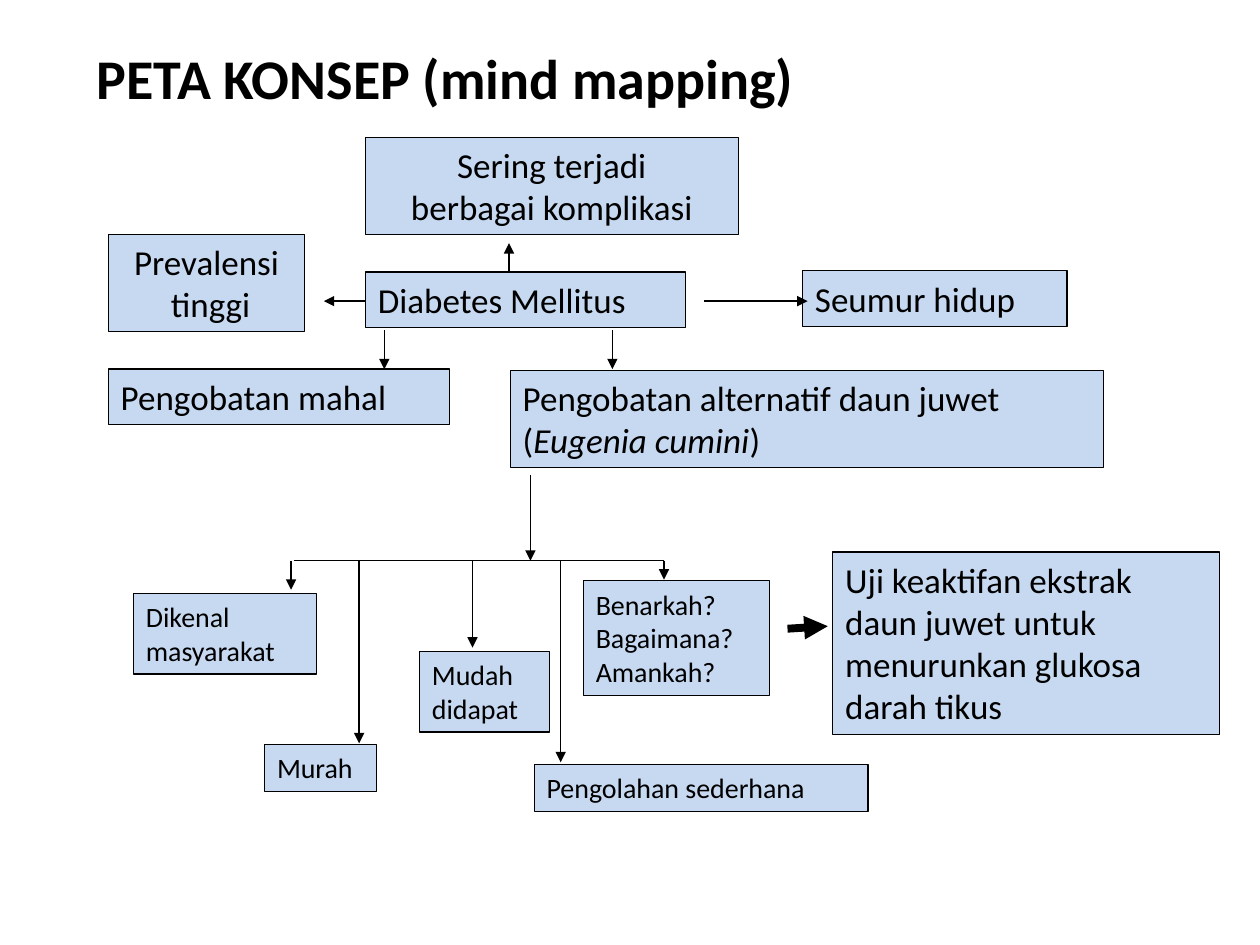
"""Build the concept map slide on diabetes mellitus and juwet leaf."""
from lxml import etree
from pptx import Presentation
from pptx.dml.color import RGBColor
from pptx.enum.shapes import MSO_CONNECTOR, MSO_SHAPE
from pptx.enum.text import MSO_ANCHOR, PP_ALIGN
from pptx.oxml.ns import qn
from pptx.util import Inches, Pt

STRAIGHT = MSO_CONNECTOR.STRAIGHT
RECTANGLE = MSO_SHAPE.RECTANGLE
TOP = MSO_ANCHOR.TOP
LEFT, CENTER = PP_ALIGN.LEFT, PP_ALIGN.CENTER
FONT = "Calibri"
COLORS = {"box": "C6D9F1", "ink": "000000"}
LARGE, SMALL = 20, 16
THIN, THICK = 0.75, 4.5
ITALIC = {"Eugenia cumini"}

TITLE = ("PETA KONSEP (mind mapping)", (0.67, 0.3, 8.24, 0.64), 32)

BOXES = [
    ((0.86, 1.86, 1.56, 0.77), LARGE, CENTER, [["Prevalensi"], [" tinggi"]]),
    ((0.86, 2.93, 2.71, 0.44), LARGE, LEFT, [["Pengobatan mahal"]]),
    ((2.9, 1.09, 2.96, 0.77), LARGE, CENTER, [["Sering terjadi"], ["berbagai komplikasi"]]),
    ((6.37, 2.15, 2.1, 0.44), LARGE, LEFT, [["Seumur hidup"]]),
    ((1.06, 4.71, 1.45, 0.64), SMALL, LEFT, [["Dikenal"], ["masyarakat"]]),
    ((2.1, 5.91, 0.89, 0.37), SMALL, LEFT, [["Murah"]]),
    ((3.33, 5.17, 1.03, 0.64), SMALL, LEFT, [["Mudah"], ["didapat"]]),
    ((4.63, 4.61, 1.48, 0.91), SMALL, LEFT, [["Benarkah?"], ["Bagaimana?"], ["Amankah?"]]),
    ((4.24, 6.07, 2.65, 0.37), SMALL, LEFT, [["Pengolahan sederhana"]]),
    ((2.9, 2.16, 2.54, 0.44), LARGE, LEFT, [["Diabetes Mellitus"]]),
    ((4.05, 2.94, 4.71, 0.77), LARGE, LEFT,
     [["Pengobatan alternatif daun juwet"], ["(", "Eugenia cumini", ")"]]),
    ((6.61, 4.38, 3.07, 1.45), LARGE, LEFT,
     [["Uji keaktifan ekstrak"], ["daun juwet untuk"], ["menurunkan glukosa"], ["darah tikus"]]),
]

BRANCH_Y = 4.45
BRANCH_LINE = (2.33, BRANCH_Y, 5.27, BRANCH_Y)
BRANCH_ENDS = [(5.27, 4.6), (4.45, 6.05), (3.75, 5.14), (2.31, 4.68), (2.85, 5.9)]
TOPIC_ARROWS = [
    (3.05, 2.62, 3.05, 2.93),
    (2.9, 2.39, 2.57, 2.39),
    (4.04, 2.16, 4.04, 1.93),
    (5.59, 2.39, 6.41, 2.39),
    (4.86, 2.62, 4.86, 2.93),
    (4.21, 3.77, 4.21, BRANCH_Y),
]
RESEARCH_ARROW = (6.25, 4.99, 6.57, 4.97)


def color(name):
    return RGBColor.from_string(COLORS[name])


def write_text(frame, lines, size, alignment=LEFT, bold=False):
    frame.word_wrap = True
    frame.vertical_anchor = TOP
    for index, line in enumerate(lines):
        paragraph = frame.add_paragraph() if index else frame.paragraphs[0]
        paragraph.alignment = alignment
        for text in line:
            run = paragraph.add_run()
            run.text = text
            run.font.name = FONT
            run.font.size = Pt(size)
            run.font.bold = bold
            run.font.italic = text in ITALIC
            run.font.color.rgb = color("ink")


def add_box(slide, place, size, alignment, lines):
    shape = slide.shapes.add_shape(RECTANGLE, *map(Inches, place))
    shape.shadow.inherit = False
    shape.fill.solid()
    shape.fill.fore_color.rgb = color("box")
    shape.line.color.rgb = color("ink")
    shape.line.width = Pt(THIN)
    write_text(shape.text_frame, lines, size, alignment)


def add_line(slide, ends, width=THIN, arrow=True):
    connector = slide.shapes.add_connector(STRAIGHT, *map(Inches, ends))
    connector.line.color.rgb = color("ink")
    connector.line.width = Pt(width)
    properties = connector._element.spPr
    if arrow:
        etree.SubElement(properties.find(qn("a:ln")), qn("a:tailEnd"), type="triangle")
    etree.SubElement(properties, qn("a:effectLst"))


def main():
    presentation = Presentation()
    presentation.slide_width, presentation.slide_height = Inches(10), Inches(7.5)
    slide = presentation.slides.add_slide(presentation.slide_layouts[6])

    add_line(slide, BRANCH_LINE, arrow=False)
    for x, end_y in BRANCH_ENDS:
        add_line(slide, (x, BRANCH_Y, x, end_y))
    for box in BOXES:
        add_box(slide, *box)
    for ends in TOPIC_ARROWS:
        add_line(slide, ends)
    add_line(slide, RESEARCH_ARROW, THICK)

    text, place, size = TITLE
    title = slide.shapes.add_textbox(*map(Inches, place))
    write_text(title.text_frame, [[text]], size, bold=True)
    presentation.save("out.pptx")


if __name__ == "__main__":
    main()
